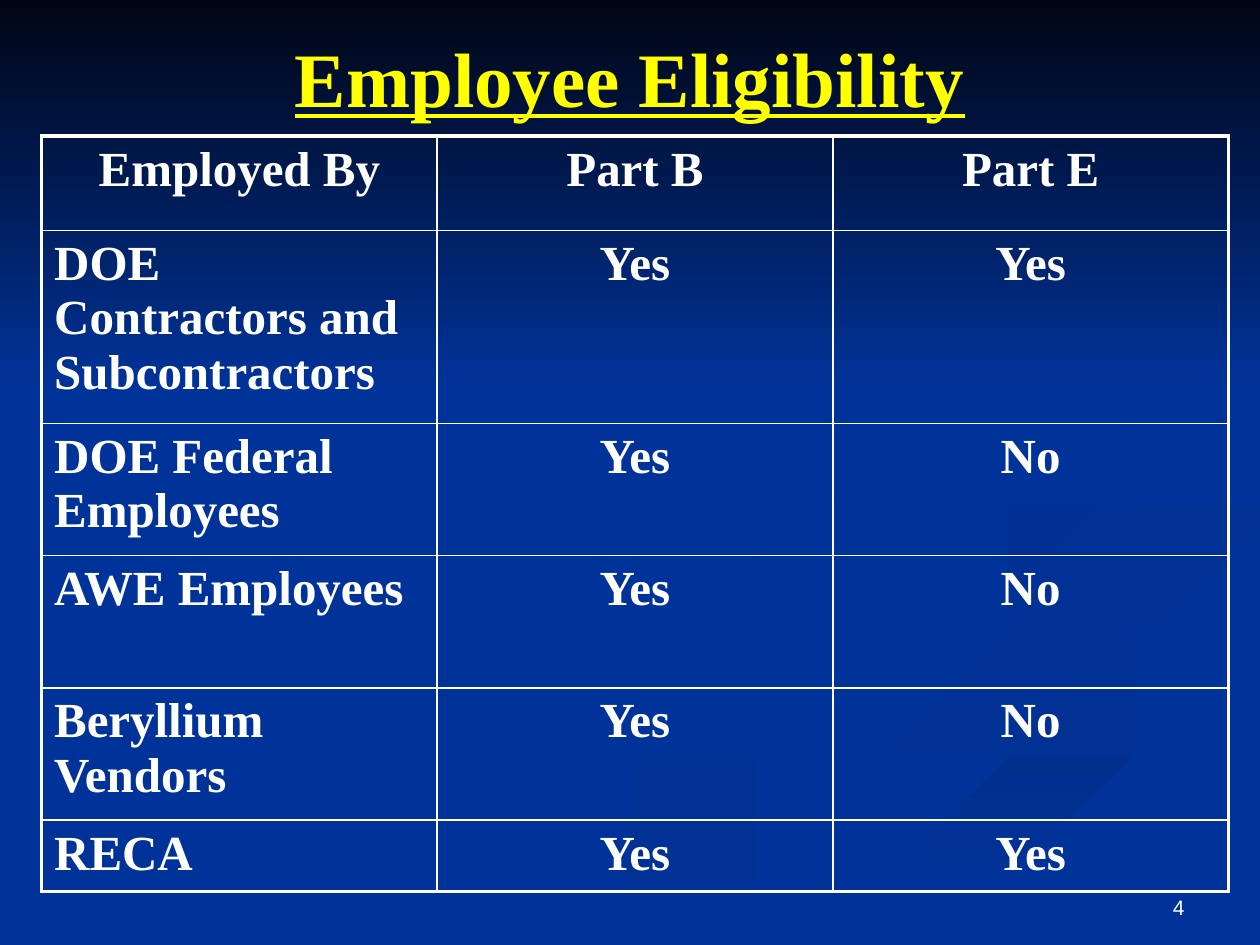
from lxml.etree import SubElement
from pptx import Presentation
from pptx.dml.color import RGBColor
from pptx.enum.shapes import MSO_SHAPE
from pptx.enum.text import MSO_ANCHOR, PP_ALIGN
from pptx.oxml.ns import qn
from pptx.util import Inches, Pt

BLUE = "003399"
WHITE = "FFFFFF"
SERIF = "Times New Roman"

TITLE = "Employee Eligibility"
PAGE_NUMBER = "4"
ROWS = [
    ("Employed By", "Part B", "Part E"),
    ("DOE Contractors and Subcontractors", "Yes", "Yes"),
    ("DOE Federal Employees", "Yes", "No"),
    ("AWE Employees", "Yes", "No"),
    ("Beryllium Vendors", "Yes", "No"),
    ("RECA", "Yes", "Yes"),
]
ROW_HEIGHTS = [0.75, 1.53, 1.05, 1.05, 1.05, 0.48]
COLUMN_WIDTH = 3.14

TITLE_FORMAT = {"name": SERIF, "size": Pt(44), "bold": True, "underline": True}
CELL_FORMAT = {"name": SERIF, "size": Pt(28), "bold": True}
NUMBER_FORMAT = {"name": "Arial", "size": Pt(12)}

CURVE_STEPS = 6
RIBBONS = [
    (BLUE, "003193", 0,
     [(5.75, 4.59), (6.02, 4.9), (6.82, 5.19), (7.81, 5.53), (8, 5.81), (7.4, 6.18),
      (5.64, 6.65), (3.61, 7.49)],
     [(5.75, 4.59), (5.72, 4.76), (6.31, 5.05), (7.52, 5.43), (7.86, 5.66), (7.27, 6.02),
      (5.39, 6.49), (3, 7.49)]),
    (BLUE, "003193", 45,
     [(7.24, 4.64), (7.58, 4.98), (8.7, 5.3), (9.43, 5.7), (8.94, 6.05)],
     [(7.24, 4.64), (7.46, 5), (8.38, 5.36), (9.18, 5.81), (8.94, 6.05)]),
    ("002F8C", BLUE, 90,
     [(5.03, 7.49), (6.3, 6.93), (7.97, 6.38), (9.98, 5.81)],
     [(5.71, 7.49), (7.22, 6.82), (9.98, 6.09)]),
    (BLUE, BLUE, 0,
     [(4.77, 7.49), (6.63, 6.68), (8.69, 6.11), (9.43, 5.7), (8.71, 5.3), (7.59, 4.98),
      (7.25, 4.64), (7.88, 4.22), (9.99, 3.87)],
     [(5.03, 7.49), (6.96, 6.69), (9.99, 5.81), (9.99, 5.38), (8.66, 5.09), (7.81, 4.63),
      (8.65, 4.24), (9.99, 4.02)]),
    ("003091", BLUE, 45,
     [(9.98, 4.02), (8.35, 4.3), (7.81, 4.6), (8.26, 4.96)],
     [(9.98, 4.2), (8.59, 4.43), (8.05, 4.72), (8.26, 4.96)]),
    ("002F8E", BLUE, 45,
     [(7.62, 2.33), (8.64, 2.91), (8.94, 3.44), (8.25, 4.02), (6.83, 4.3), (5.93, 4.7),
      (6.22, 5)],
     [(7.62, 2.33), (8.55, 2.85), (8.89, 3.35), (8.18, 3.86), (6.49, 4.2), (5.77, 4.62),
      (6.22, 5)]),
]


def color(value):
    return RGBColor.from_string(value)


def spline_value(a, b, c, d, t):
    value = b + t * (c - a + t * (2 * a - 5 * b + 4 * c - d + t * (3 * b - a - 3 * c + d))) / 2
    return min(value, 9.99)


def smooth_edge(points):
    padded = [points[0], *points, points[-1]]
    curve = []
    for section in zip(padded, padded[1:], padded[2:], padded[3:]):
        for step in range(CURVE_STEPS):
            curve.append(tuple(spline_value(*axis, step / CURVE_STEPS) for axis in zip(*section)))
    return curve + [points[-1]]


def paint(shape, start_color, end_color, angle):
    shape.shadow.inherit = False
    shape.line.fill.background()
    if start_color == end_color:
        shape.fill.solid()
        shape.fill.fore_color.rgb = color(start_color)
        return
    shape.fill.gradient()
    shape.fill.gradient_angle = (360 - angle) % 360
    for stop, value, position in zip(shape.fill.gradient_stops, (start_color, end_color), (0, 1)):
        stop.color.rgb = color(value)
        stop.position = position


def add_ribbon(slide, start_color, end_color, angle, first_edge, second_edge):
    outline = smooth_edge(first_edge) + smooth_edge(second_edge)[::-1]
    builder = slide.shapes.build_freeform(*outline[0], scale=Inches(1))
    builder.add_line_segments(outline[1:], close=True)
    paint(builder.convert_to_shape(), start_color, end_color, angle)


def write_text(frame, text, font_format, font_color, alignment):
    paragraph = frame.paragraphs[0]
    paragraph.alignment = alignment
    run = paragraph.add_run()
    run.text = text
    for name, value in font_format.items():
        setattr(run.font, name, value)
    run.font.color.rgb = color(font_color)


def add_text(slide, box, anchor, *text_settings):
    frame = slide.shapes.add_textbox(*map(Inches, box)).text_frame
    frame.word_wrap = True
    frame.vertical_anchor = anchor
    write_text(frame, *text_settings)


def set_borders(cell, outer_sides):
    properties = cell._tc.get_or_add_tcPr()
    for index, (side, is_outer) in enumerate(outer_sides.items()):
        width = Pt(2.25 if is_outer else 1)
        line = SubElement(properties, qn(f"a:ln{side}"), w=str(int(width)))
        fill = SubElement(line, qn("a:solidFill"))
        SubElement(fill, qn("a:srgbClr"), val=WHITE)
        properties.insert(index, line)


def add_eligibility_table(slide):
    columns = len(ROWS[0])
    table = slide.shapes.add_table(
        len(ROWS), columns, Inches(0.33), Inches(1.08),
        Inches(COLUMN_WIDTH * columns), Inches(sum(ROW_HEIGHTS))).table
    table.first_row = False
    table.horz_banding = False
    for column in table.columns:
        column.width = Inches(COLUMN_WIDTH)
    for row_index, (texts, height) in enumerate(zip(ROWS, ROW_HEIGHTS)):
        table.rows[row_index].height = Inches(height)
        for column_index, text in enumerate(texts):
            cell = table.cell(row_index, column_index)
            is_label = row_index > 0 and column_index == 0
            alignment = PP_ALIGN.LEFT if is_label else PP_ALIGN.CENTER
            write_text(cell.text_frame, text, CELL_FORMAT, WHITE, alignment)
            cell.fill.background()
            set_borders(cell, {
                "L": column_index == 0,
                "R": column_index == columns - 1,
                "T": row_index == 0,
                "B": row_index == len(ROWS) - 1,
            })


def main():
    presentation = Presentation()
    presentation.slide_width = Inches(10)
    presentation.slide_height = Inches(7.5)
    slide = presentation.slides.add_slide(presentation.slide_layouts[6])
    slide.background.fill.solid()
    slide.background.fill.fore_color.rgb = color(BLUE)
    for ribbon in RIBBONS:
        add_ribbon(slide, *ribbon)
    band = slide.shapes.add_shape(MSO_SHAPE.RECTANGLE, 0, 0, Inches(10), Inches(3.08))
    paint(band, "000514", BLUE, 90)
    add_text(slide, (7.17, 6.83, 2.33, 0.52), MSO_ANCHOR.BOTTOM,
             PAGE_NUMBER, NUMBER_FORMAT, WHITE, PP_ALIGN.RIGHT)
    add_text(slide, (0.5, 0.3, 9, 0.62), MSO_ANCHOR.MIDDLE,
             TITLE, TITLE_FORMAT, "FFFF00", PP_ALIGN.CENTER)
    add_eligibility_table(slide)
    presentation.save("out.pptx")


if __name__ == "__main__":
    main()
